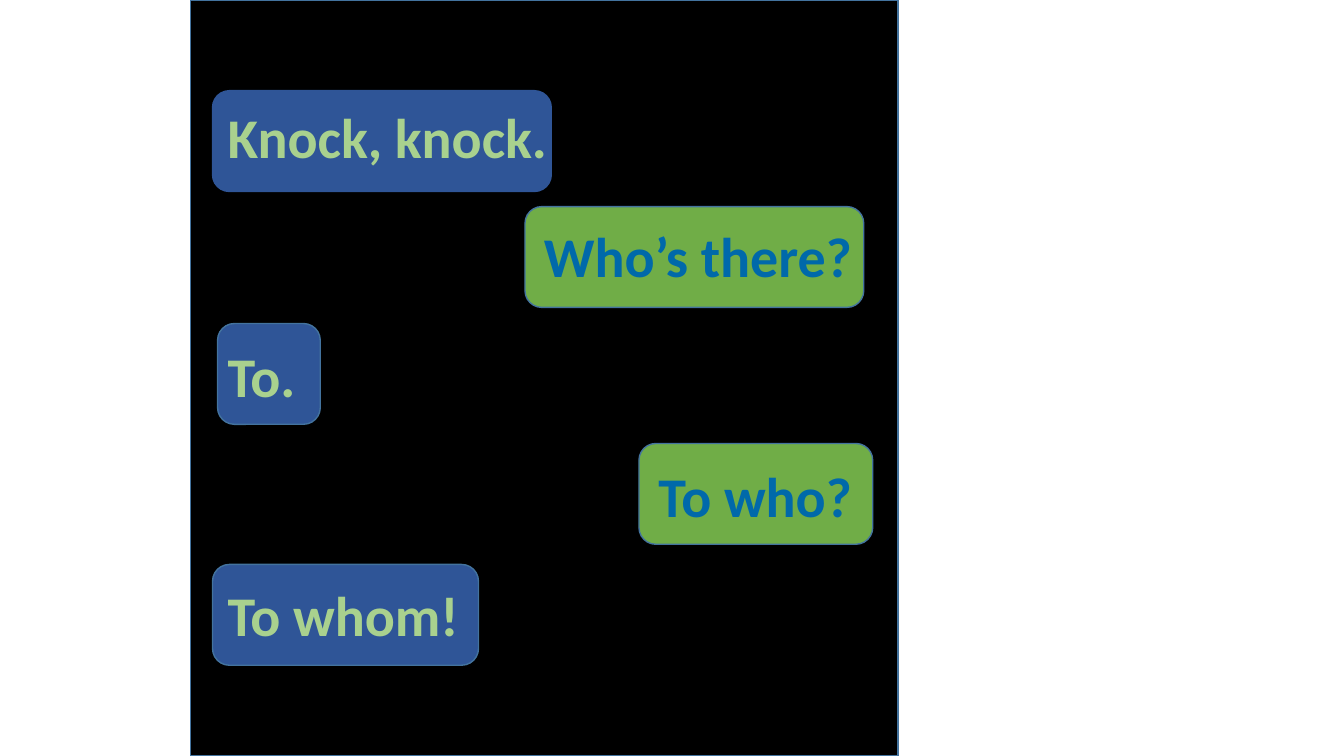
from pptx import Presentation
from pptx.dml.color import RGBColor
from pptx.enum.shapes import MSO_SHAPE as Preset
from pptx.enum.text import MSO_ANCHOR as Anchor, PP_ALIGN as Align
from pptx.util import Pt

COLORS = {
    "panel": "000000", "outline": "43739E",
    "caller": "2F5597", "caller_text": "A9D18E",
    "replier": "70AD47", "replier_text": "0069AA",
}
BUBBLE_HEIGHT = 72
CHAT = [
    ("caller", "Knock, knock.", 15.8, 64.8, 242, "caller"),
    ("replier", "Who’s there?", 239, 147.6, 242, "outline"),
    ("caller", "To.", 19.4, 231.1, 73.4, "outline"),
    ("replier", "To who?", 320.4, 316.8, 167, "outline"),
    ("caller", "To whom!", 15.8, 403.2, 190, "outline"),
]


def color(name):
    """Return the named colour."""
    return RGBColor.from_string(COLORS[name])


def add_block(slide, preset, box, fill, line):
    """Draw a filled, outlined shape in the given box."""
    block = slide.shapes.add_shape(preset, *map(Pt, box))
    block.shadow.inherit = False
    block.fill.solid()
    block.fill.fore_color.rgb = color(fill)
    block.line.color.rgb = color(line)
    block.line.width = Pt(1)


def add_bubbles(slide, box):
    """Draw the chat panel and its speech bubbles."""
    left, top, _, _ = box
    add_block(slide, Preset.RECTANGLE, box, "panel", "outline")
    for speaker, _, x, y, width, line in CHAT:
        bubble = (left + x, top + y, width, BUBBLE_HEIGHT)
        add_block(slide, Preset.ROUNDED_RECTANGLE, bubble, speaker, line)


def add_dialogue(slide, box):
    """Write the joke, with the caller at left and the replier at right."""
    frame = slide.shapes.add_textbox(*map(Pt, box)).text_frame
    frame.word_wrap = True
    frame.vertical_anchor = Anchor.MIDDLE
    for index, (speaker, words, *_) in enumerate(CHAT):
        speech = frame.add_paragraph() if index else frame.paragraphs[0]
        speech.text = words
        speech.alignment = Align.LEFT if speaker == "caller" else Align.RIGHT
        speech.line_spacing = 0.9
        speech.space_before = Pt(42.3 if index else 0)
        for name, value in {"name": "Calibri", "size": Pt(40), "bold": True}.items():
            setattr(speech.font, name, value)
        speech.font.color.rgb = color(speaker + "_text")


def main():
    """Build and save the slide."""
    deck = Presentation()
    deck.slide_width, deck.slide_height = Pt(960), Pt(540)
    slide = deck.slides.add_slide(deck.slide_layouts[6])
    add_bubbles(slide, (136, 0, 505.5, 540))
    add_dialogue(slide, (155.5, 55, 460, 432))
    deck.save("out.pptx")


if __name__ == "__main__":
    main()
